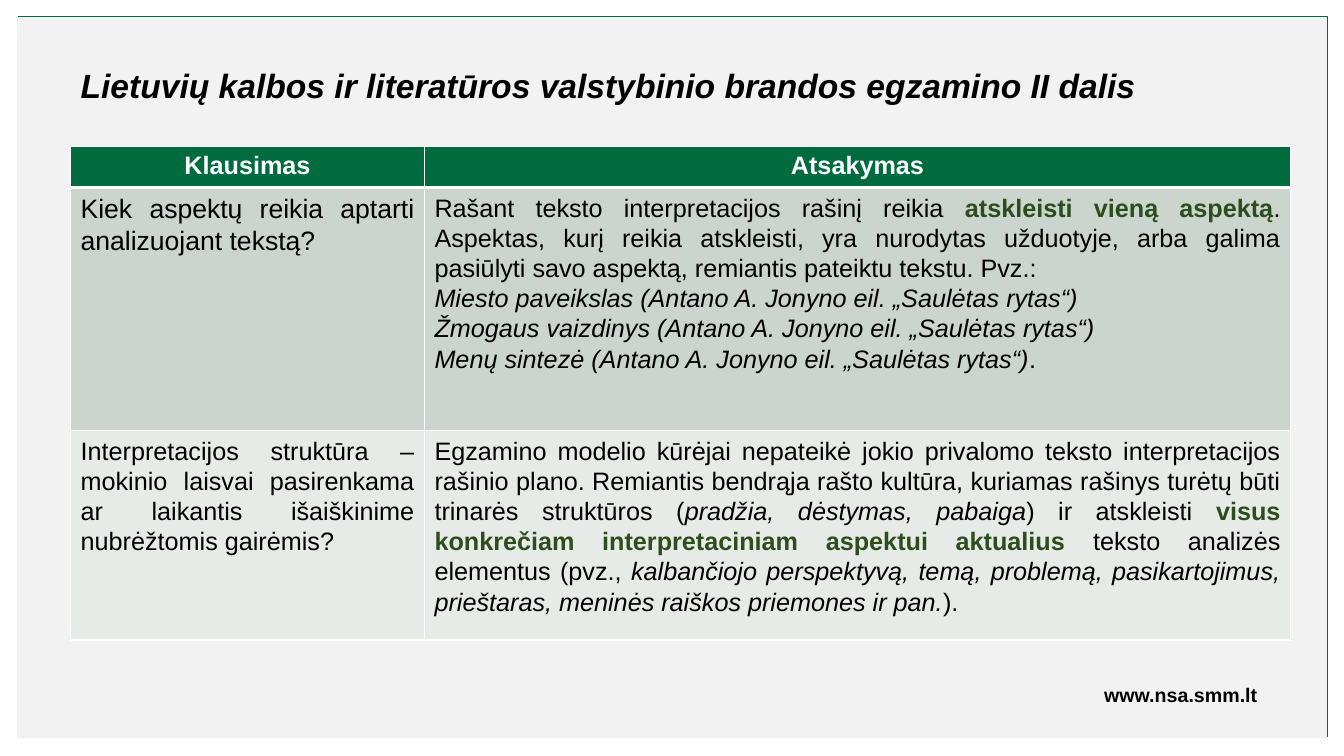
from pptx import Presentation
from pptx.dml.color import RGBColor as Rgb
from pptx.enum.shapes import MSO_SHAPE as Shape
from pptx.enum.text import MSO_ANCHOR as Anchor, PP_ALIGN as Align
from pptx.oxml.ns import qn
from pptx.util import Inches, Pt
from lxml.etree import SubElement

COLORS = {
    "green": "006B3E", "panel": "F2F2F2", "white": "FFFFFF", "black": "000000",
    "mark": "2C4E1C", "dark": "CCD4CE", "light": "E7EBE8",
}
WIDTHS = [3.51, 8.59]
HEIGHTS = [0.41, 2.41, 2.08]
POEM = "(Antano A. Jonyno eil. „Saulėtas rytas“)"

# A cell is a list of paragraphs; a paragraph is a list of (text, style) runs.
HEADS = ["Klausimas", "Atsakymas"]
ROWS = [
    (
        [[("Kiek aspektų reikia aptarti analizuojant tekstą?", "large")]],
        [
            [("Rašant teksto interpretacijos rašinį reikia ", ""),
             ("atskleisti vieną aspektą", "mark"),
             (". Aspektas, kurį reikia atskleisti, yra nurodytas užduotyje, "
              "arba galima pasiūlyti savo aspektą, remiantis pateiktu tekstu. "
              "Pvz.:", "")],
            [(f"Miesto paveikslas {POEM}", "italic")],
            [(f"Žmogaus vaizdinys {POEM}", "italic")],
            [(f"Menų sintezė {POEM}", "italic"), (".", "")],
        ],
    ),
    (
        [[("Interpretacijos struktūra – mokinio laisvai pasirenkama ar "
           "laikantis išaiškinime nubrėžtomis gairėmis?", "")]],
        [
            [("Egzamino modelio kūrėjai nepateikė jokio privalomo teksto "
              "interpretacijos rašinio plano. Remiantis bendrąja rašto kultūra, "
              "kuriamas rašinys turėtų būti trinarės struktūros (", ""),
             ("pradžia, dėstymas, pabaiga", "italic"),
             (") ir atskleisti ", ""),
             ("visus konkrečiam interpretaciniam aspektui aktualius ", "mark"),
             ("teksto analizės elementus (pvz., ", ""),
             ("kalbančiojo perspektyvą, temą, problemą, pasikartojimus, "
              "prieštaras, meninės raiškos priemones ir pan.", "italic"),
             (").", "")],
        ],
    ),
]


def color(name):
    return Rgb.from_string(COLORS[name])


def add_run(para, text, size, ink="black", bold=False, italic=False):
    run = para.add_run()
    run.text = text
    font = run.font
    font.name, font.size = "Arial", Pt(size)
    font.bold, font.italic = bold, italic
    font.color.rgb = color(ink)


def add_panel(slide, left, top, fill):
    panel = slide.shapes.add_shape(
        Shape.RECTANGLE, Inches(left), Inches(top), Inches(12.99), Inches(7.15))
    panel.shadow.inherit = False
    panel.fill.solid()
    panel.fill.fore_color.rgb = color(fill)
    panel.line.fill.background()


def set_title(slide, text):
    """Fill the title placeholder and bring it in front of the panels."""
    title = slide.shapes.title
    title.left, title.top = Inches(0.7), Inches(0.59)
    title.width, title.height = Inches(11.53), Inches(0.5)
    frame = title.text_frame
    frame.word_wrap = True
    frame.vertical_anchor = Anchor.TOP
    para = frame.paragraphs[0]
    para.alignment = Align.LEFT
    add_run(para, text, 24, bold=True, italic=True)
    slide.shapes.element.append(title.element)


def add_site(slide, text):
    box = slide.shapes.add_textbox(
        Inches(9.37), Inches(6.73), Inches(3.2), Inches(0.34))
    box.text_frame.word_wrap = True
    para = box.text_frame.paragraphs[0]
    para.alignment = Align.RIGHT
    add_run(para, text, 14, bold=True)


def style_cell(cell, fill, top=1, bottom=1):
    """Set white borders, with widths in points, and then the fill."""
    props = cell._tc.get_or_add_tcPr()
    for side, width in zip("LRTB", (1, 1, top, bottom)):
        line = SubElement(props, qn(f"a:ln{side}"), w=str(Pt(width)))
        paint = SubElement(line, qn("a:solidFill"))
        SubElement(paint, qn("a:srgbClr"), val=COLORS["white"])
    cell.fill.solid()
    cell.fill.fore_color.rgb = color(fill)


def fill_cell(cell, paras):
    frame = cell.text_frame
    for i, runs in enumerate(paras):
        para = frame.add_paragraph() if i else frame.paragraphs[0]
        para.alignment = Align.JUSTIFY
        para.line_spacing = 1.07
        for text, style in runs:
            marked = style == "mark"
            add_run(para, text, 19 if style == "large" else 18,
                    "mark" if marked else "black", marked, style == "italic")


def add_grid(slide):
    table = slide.shapes.add_table(
        len(HEIGHTS), len(WIDTHS), Inches(0.7), Inches(1.45),
        Inches(sum(WIDTHS)), Inches(sum(HEIGHTS))).table
    for col, width in zip(table.columns, WIDTHS):
        col.width = Inches(width)
    for row, height in zip(table.rows, HEIGHTS):
        row.height = Inches(height)
    for j, head in enumerate(HEADS):
        cell = table.cell(0, j)
        style_cell(cell, "green", bottom=3)
        para = cell.text_frame.paragraphs[0]
        para.alignment = Align.CENTER
        add_run(para, head, 18, "white", bold=True)
    for i, row in enumerate(ROWS, 1):
        for j, paras in enumerate(row):
            cell = table.cell(i, j)
            style_cell(cell, "dark" if i % 2 else "light", top=3 if i == 1 else 1)
            fill_cell(cell, paras)


def main():
    deck = Presentation()
    deck.slide_width, deck.slide_height = Inches(13.33), Inches(7.5)
    slide = deck.slides.add_slide(deck.slide_layouts[5])
    add_panel(slide, 0.18, 0.16, "green")
    add_panel(slide, 0.17, 0.17, "panel")
    add_site(slide, "www.nsa.smm.lt")
    set_title(slide, "Lietuvių kalbos ir literatūros valstybinio brandos "
                     "egzamino II dalis")
    add_grid(slide)
    deck.save("out.pptx")


if __name__ == "__main__":
    main()
